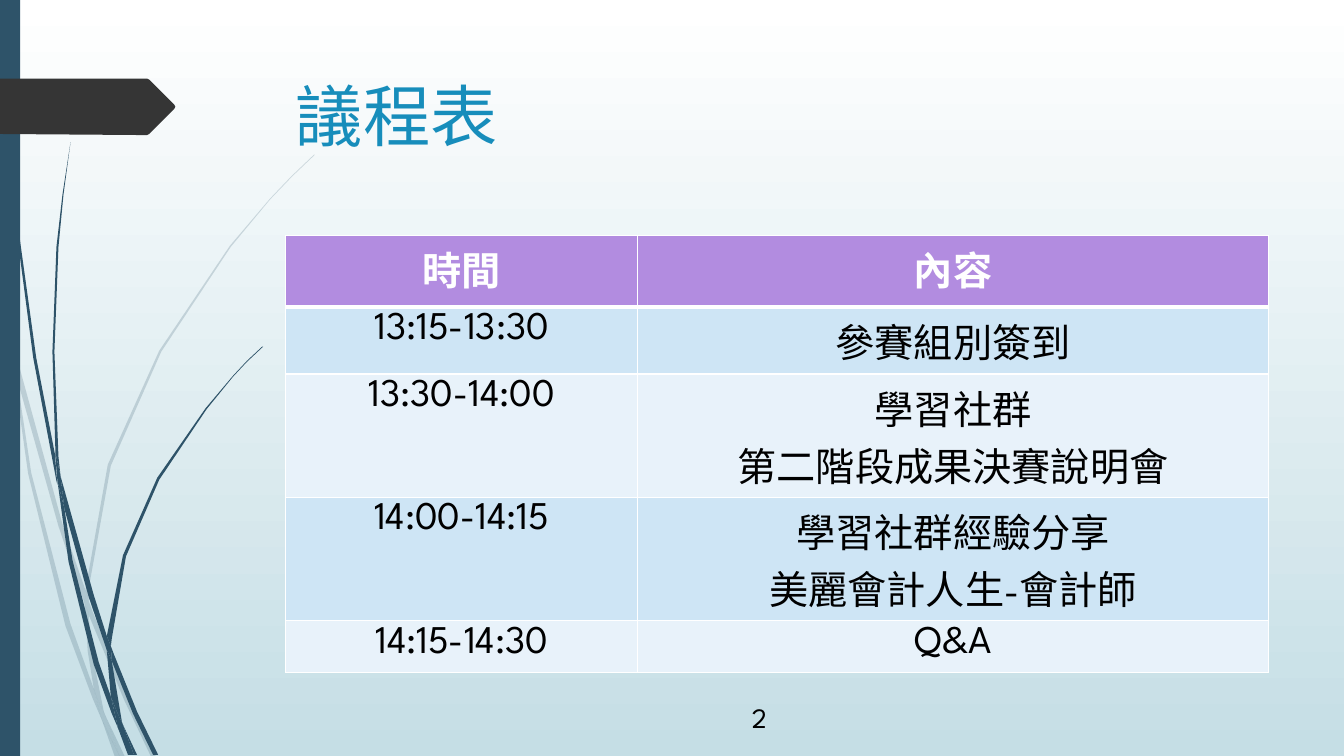
from pptx import Presentation
from pptx.dml.color import RGBColor
from pptx.enum.shapes import MSO_SHAPE as Shape
from pptx.enum.text import MSO_ANCHOR as Anchor, MSO_AUTO_SIZE as Fit, PP_ALIGN as Align
from pptx.oxml.ns import qn
from pptx.util import Pt
from lxml.etree import SubElement

# Content
TITLE = "議程表"
AGENDA = [
    ("時間", "內容"),
    ("13:15-13:30", "參賽組別簽到"),
    ("13:30-14:00", "學習社群\n第二階段成果決賽說明會"),
    ("14:00-14:15", "學習社群經驗分享\v美麗會計人生-會計師"),
    ("14:15-14:30", "Q&A"),
]
NUMBER = "2"
COLS = [251.5, 450.5]
ROWS = [51.5, 41, 44.6, 44.6, 36.7]
DEPTH = 282

# Outlines of the grass pieces, in grid units
UNIT = 0.72
PALE = [
    [(11, 350), (9, 322), (0, 282), (0, 299), (10, 344)],
    [(58, 522), (84, 599), (85, 586), (62, 520), (14, 345), (17, 376)],
    [(92, 607), (88, 596), (88, 610), (123, 694), (150, 751), (155, 751), (127, 692)],
    [(119, 751), (124, 751), (105, 711)],
    [(93, 683), (70, 619), (31, 469), (17, 376), (11, 350), (28, 470),
     (65, 621), (92, 693), (101, 714), (99, 707)],
    [(84, 599), (87, 646), (93, 683), (96, 692), (105, 711), (103, 706),
     (91, 646), (88, 610), (88, 608)],
    [(88, 584), (110, 462), (160, 349), (229, 245), (268, 198), (290, 175),
     (312, 154), (312, 153), (289, 175), (268, 197), (228, 244), (158, 348),
     (107, 461), (85, 584), (85, 586), (88, 596)],
    [(101, 714), (114, 751), (119, 751)],
    [(88, 608), (88, 610), (88, 596), (85, 586), (84, 599)],
    [(96, 692), (93, 683), (99, 707), (101, 714), (119, 751), (105, 711)],
]
DARK = [
    [(7, 110), (17, 233), (33, 355), (56, 477), (57, 481), (55, 457), (55, 453),
     (36, 355), (19, 232), (8, 109), (5, 48), (4, 0), (3, 0), (4, 48)],
    [(88, 592), (106, 645), (106, 633), (106, 631), (93, 590), (60, 472), (64, 505)],
    [(113, 649), (110, 641), (111, 656), (132, 708), (152, 749), (157, 749), (136, 706)],
    [(110, 691), (98, 657), (72, 556), (64, 505), (57, 477), (68, 557),
     (93, 659), (111, 708), (117, 722), (116, 717)],
    [(60, 472), (58, 453), (54, 349), (58, 245), (63, 193), (70, 141),
     (62, 193), (56, 245), (52, 349), (55, 449)],
    [(133, 749), (136, 749), (122, 719)],
    [(57, 477), (64, 505), (60, 472), (55, 449), (55, 453)],
    [(111, 633), (125, 552), (158, 476), (205, 406), (231, 374), (245, 359),
     (261, 344), (260, 344), (245, 358), (231, 373), (204, 405), (156, 474),
     (122, 551), (106, 631), (110, 641)],
    [(117, 722), (127, 749), (131, 749)],
    [(106, 645), (110, 691), (116, 706), (122, 719), (121, 716), (111, 656), (109, 651)],
    [(106, 645), (109, 651), (111, 656), (110, 641), (106, 631), (106, 633)],
    [(116, 706), (110, 691), (116, 717), (117, 722), (130, 749), (133, 749), (122, 719)],
]
TAG = [(173, 108), (148, 133), (146, 134), (136, 134), (0, 133), (0, 78),
       (136, 78), (146, 78), (148, 79), (173, 104), (174, 106)]

FONT = "League Spartan"
WHITE = RGBColor(0xFF, 0xFF, 0xFF)
BLACK = RGBColor(0, 0, 0)
MIST = RGBColor(0xC5, 0xDE, 0xE5)
NAVY = RGBColor(0x2E, 0x53, 0x69)
COAL = RGBColor(0x35, 0x35, 0x35)
BLUE = RGBColor(0x17, 0x8D, 0xBB)
LILAC = RGBColor(0xB2, 0x8C, 0xE0)
BANDS = [RGBColor(0xE8, 0xF2, 0xFA), RGBColor(0xCE, 0xE5, 0xF5)]


def style(frame, size, color, align, bold=False):
    for para in frame.paragraphs:
        para.alignment = align
        for run in para.runs:
            font = run.font
            font.name, font.size, font.bold = FONT, Pt(size), bold
            font.color.rgb = color


def paint(shape, color):
    shape.shadow.inherit = False
    shape.fill.solid()
    shape.fill.fore_color.rgb = color
    shape.line.fill.background()


def outline(shapes, knots, color, alpha=None):
    edge = [(Pt(x * UNIT), Pt(y * UNIT)) for x, y in knots]
    pen = shapes.build_freeform(*edge[0])
    pen.add_line_segments(edge[1:], close=True)
    shape = pen.convert_to_shape()
    paint(shape, color)
    if alpha:
        tint = shape.element.spPr.find(".//" + qn("a:srgbClr"))
        SubElement(tint, qn("a:alpha"), val=str(alpha * 1000))


def rule(cell, width):
    """White bottom border, placed before the cell's fill."""
    props = cell._tc.get_or_add_tcPr()
    line = SubElement(props, qn("a:lnB"), w=str(Pt(width)))
    fill = SubElement(line, qn("a:solidFill"))
    SubElement(fill, qn("a:srgbClr"), val=str(WHITE))
    props.insert(0, line)


def main():
    deck = Presentation()
    deck.slide_width, deck.slide_height = Pt(960), Pt(540)
    slide = deck.slides.add_slide(deck.slide_layouts[5])
    shapes = slide.shapes

    # Background
    back = slide.background.fill
    back.gradient()
    back.gradient_angle = 270
    for stop, color in zip(back.gradient_stops, (WHITE, MIST)):
        stop.color.rgb = color

    # Grass, side strip and tag
    for knots in PALE:
        outline(shapes, knots, NAVY, 20)
    for knots in DARK:
        outline(shapes, knots, NAVY)
    strip = shapes.add_shape(Shape.RECTANGLE, 0, 0, Pt(14.4), Pt(540))
    paint(strip, NAVY)
    outline(shapes, TAG, COAL)

    # Title
    title = shapes.title
    title.left, title.top, title.width, title.height = Pt(204.2), Pt(49.3), Pt(702), Pt(101)
    frame = title.text_frame
    frame.text = TITLE
    frame.auto_size, frame.vertical_anchor = Fit.NONE, Anchor.TOP
    style(frame, 48, BLUE, Align.LEFT)

    # Agenda table
    grid = shapes.add_table(len(ROWS), len(COLS), Pt(204), Pt(168), Pt(sum(COLS)), Pt(DEPTH))
    for col, width in zip(grid.table.columns, COLS):
        col.width = Pt(width)
    for i, (row, texts) in enumerate(zip(grid.table.rows, AGENDA)):
        row.height = Pt(ROWS[i])
        head = i == 0
        for cell, text in zip(row.cells, texts):
            cell.text_frame.text = text
            cell.fill.solid()
            cell.fill.fore_color.rgb = LILAC if head else BANDS[i % 2]
            style(cell.text_frame, 28, WHITE if head else BLACK, Align.CENTER, head)
            if head:
                rule(cell, 3)
    grid.height = Pt(DEPTH)

    # Slide number
    frame = shapes.add_textbox(Pt(494), Pt(497.5), Pt(61), Pt(29)).text_frame
    frame.word_wrap, frame.vertical_anchor = True, Anchor.MIDDLE
    frame.text = NUMBER
    style(frame, 20, BLACK, Align.RIGHT)

    deck.save("out.pptx")


if __name__ == "__main__":
    main()
